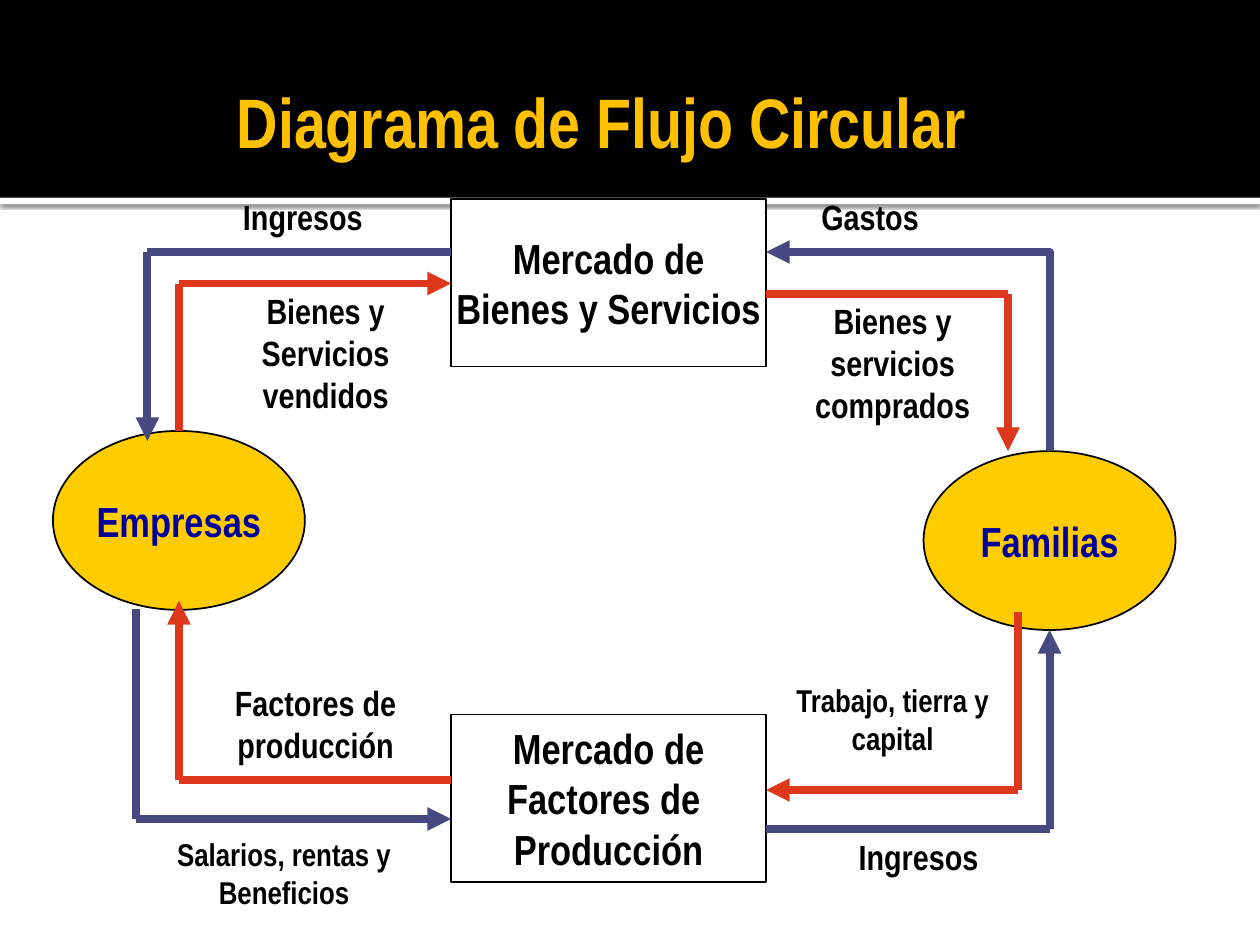
from itertools import pairwise

from lxml.etree import SubElement
from pptx import Presentation
from pptx.dml.color import RGBColor
from pptx.enum.shapes import MSO_CONNECTOR as LINK, MSO_SHAPE as SHAPE
from pptx.enum.text import MSO_ANCHOR as ANCHOR, PP_ALIGN as ALIGN
from pptx.oxml.ns import qn
from pptx.util import Inches, Pt

FONT = "Arial Narrow"
COLORS = {
    "band": "000000", "white": "FFFFFF", "title": "FFC000", "text": "000000",
    "agent": "FFCC00", "agent_text": "000099", "money": "474A81", "goods": "DE381C",
}

TITLE = "Diagrama de Flujo Circular"

# Agents: name, left, top
AGENTS = [("Empresas", 0.42, 3.42), ("Familias", 7.33, 3.58)]
AGENT_SIZE = (2, 1.42)

# Markets: paragraphs (each a list of lines), left, top
MARKETS = [
    ([["Mercado de", "Factores de "], ["Producción"]], 3.58, 5.67),
    ([["Mercado de", "Bienes y Servicios"]], 3.58, 1.58),
]
MARKET_SIZE = (2.5, 1.33)

# Labels: text, left, top, width, height, size, alignment
LABELS = [
    ("Gastos", 6.42, 1.5, 1.92, 0.43, 20, ALIGN.LEFT),
    ("Ingresos", 1.83, 1.5, 1.92, 0.43, 20, ALIGN.LEFT),
    ("Salarios, rentas y Beneficios", 1.17, 6.58, 2.17, 0.7, 18, ALIGN.CENTER),
    ("Ingresos", 6.33, 6.58, 1.92, 0.43, 20, ALIGN.CENTER),
    ("Bienes y Servicios vendidos", 1.5, 2.25, 2.17, 1.1, 20, ALIGN.CENTER),
    ("Bienes y servicios comprados", 6, 2.33, 2.17, 1.1, 20, ALIGN.CENTER),
    ("Trabajo, tierra y capital", 6, 5.36, 2.17, 0.7, 18, ALIGN.CENTER),
    ("Factores de producción", 1.42, 5.36, 2.17, 0.77, 20, ALIGN.CENTER),
]

# Flows: start, corner and end; the last leg carries the arrowhead
FLOWS = [
    ("money", [(3.58, 2), (1.17, 2), (1.17, 3.5)]),
    ("money", [(1.08, 4.83), (1.08, 6.5), (3.58, 6.5)]),
    ("money", [(6.08, 6.58), (8.33, 6.58), (8.33, 5)]),
    ("goods", [(6.08, 2.33), (8, 2.33), (8, 3.58)]),
    ("goods", [(1.42, 3.42), (1.42, 2.25), (3.58, 2.25)]),
    ("goods", [(8.08, 4.86), (8.08, 6.27), (6.08, 6.27)]),
    ("goods", [(3.58, 6.19), (1.42, 6.19), (1.42, 4.77)]),
]
SPENDING = [(6.08, 2), (8.33, 3.58)]  # elbow, arrowhead at its start


def rgb(name):
    return RGBColor.from_string(COLORS[name])


def write(frame, paragraphs, size, color, align=ALIGN.CENTER):
    for i, lines in enumerate(paragraphs):
        paragraph = frame.paragraphs[0] if i == 0 else frame.add_paragraph()
        paragraph.alignment = align
        for j, line in enumerate(lines):
            if j:
                paragraph.add_line_break()
            run = paragraph.add_run()
            run.text = line
            run.font.name, run.font.size, run.font.bold = FONT, Pt(size), True
            run.font.color.rgb = rgb(color)


def add_block(shapes, kind, box, fill, outlined=True):
    block = shapes.add_shape(kind, *map(Inches, box))
    block.shadow.inherit = False
    block.fill.solid()
    block.fill.fore_color.rgb = rgb(fill)
    if outlined:
        block.line.color.rgb = rgb("text")
        block.line.width = Pt(1)
    else:
        block.line.fill.background()
    block.text_frame.word_wrap = False
    block.text_frame.vertical_anchor = ANCHOR.MIDDLE
    return block


def add_flow(shapes, kind, start, end, color, arrow=None):
    flow = shapes.add_connector(kind, *map(Inches, (*start, *end)))
    flow.line.color.rgb = rgb(color)
    flow.line.width = Pt(4.5)
    if arrow:
        SubElement(flow.line._get_or_add_ln(), qn(f"a:{arrow}"), type="triangle")
    SubElement(flow._element.spPr, qn("a:effectLst"))
    return flow


def main():
    prs = Presentation()
    prs.slide_width, prs.slide_height = Inches(10), Inches(7.5)
    slide = prs.slides.add_slide(prs.slide_layouts[5])
    shapes = slide.shapes

    # Header bands, the white one with a soft shadow
    stripe = add_block(shapes, SHAPE.RECTANGLE, (0, 1.57, 10, 0.05), "white", False)
    effects = stripe._element.spPr.find(qn("a:effectLst"))
    shadow = SubElement(effects, qn("a:outerShdw"), blurRad=str(Pt(2.5)),
                        dist=str(Pt(0.8)), dir="5400000", rotWithShape="0")
    shade = SubElement(shadow, qn("a:srgbClr"), val=COLORS["band"])
    SubElement(shade, qn("a:alpha"), val="60000")
    add_block(shapes, SHAPE.RECTANGLE, (0, 0, 10, 1.57), "band", False)

    # Title, brought in front of the bands
    title = shapes.title
    title.left, title.top, title.width, title.height = map(Inches, (0.5, 0.33, 8.5, 1.25))
    frame = title.text_frame
    frame.vertical_anchor = ANCHOR.MIDDLE
    frame.margin_left = Inches(0.1)
    frame.margin_right = frame.margin_top = frame.margin_bottom = Inches(0.05)
    write(frame, [[TITLE]], 40, "title")
    shapes._spTree.append(title._element)

    # Agents and markets
    for name, left, top in AGENTS:
        agent = add_block(shapes, SHAPE.OVAL, (left, top, *AGENT_SIZE), "agent")
        write(agent.text_frame, [[name]], 24, "agent_text")
    for paragraphs, left, top in MARKETS:
        market = add_block(shapes, SHAPE.RECTANGLE, (left, top, *MARKET_SIZE), "white")
        write(market.text_frame, paragraphs, 24, "text")

    # Flows
    spending = add_flow(shapes, LINK.ELBOW, *SPENDING, "money", "headEnd")
    spending._element.spPr.find(qn("a:prstGeom")).set("prst", "bentConnector2")
    for color, points in FLOWS:
        for start, end in pairwise(points):
            arrow = "tailEnd" if end == points[-1] else None
            add_flow(shapes, LINK.STRAIGHT, start, end, color, arrow)

    # Flow labels
    for text, left, top, width, height, size, align in LABELS:
        label = shapes.add_textbox(*map(Inches, (left, top, width, height)))
        label.text_frame.word_wrap = True
        write(label.text_frame, [[text]], size, "text", align)

    prs.save("out.pptx")


if __name__ == "__main__":
    main()
